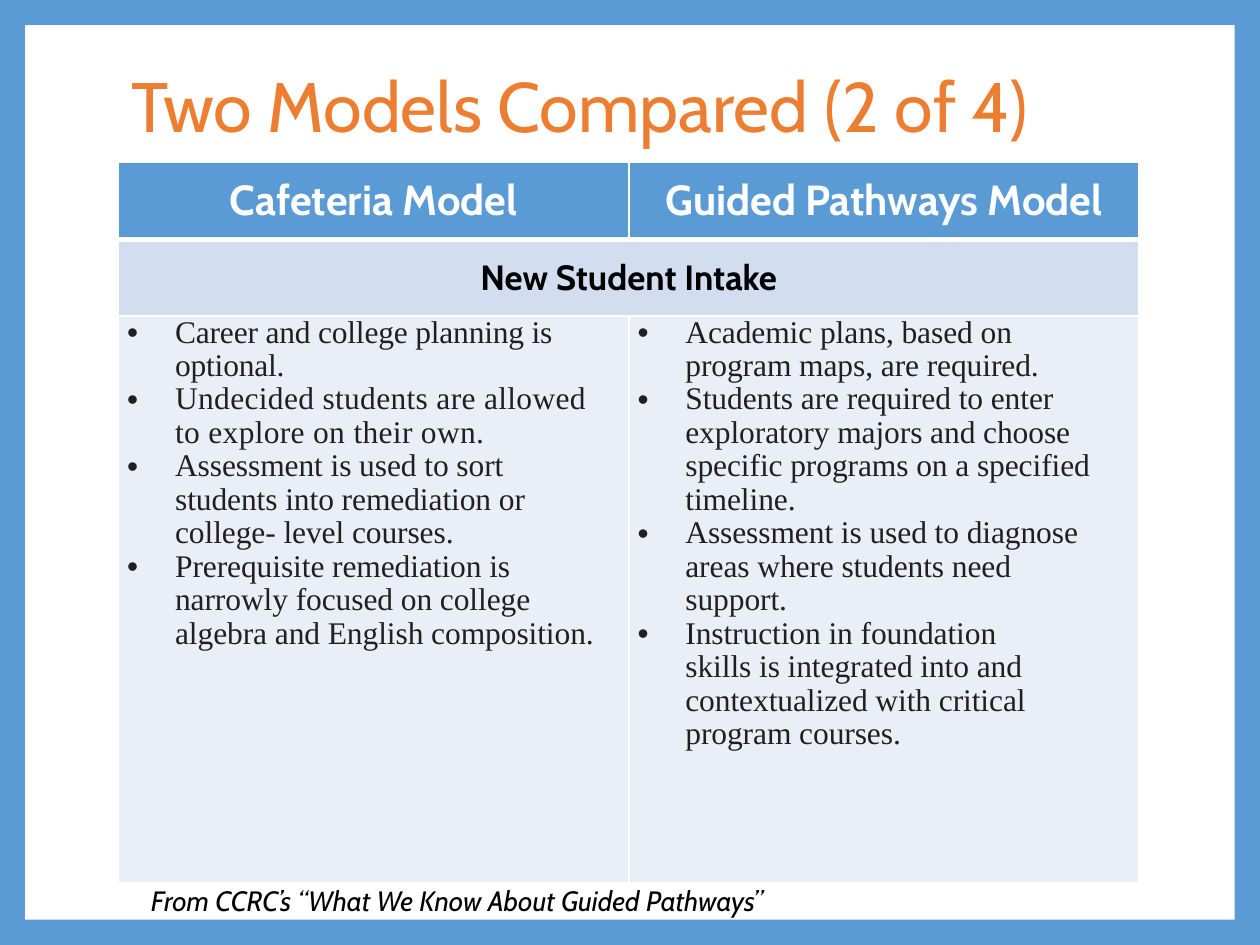
import pptx
import pptx.dml.color
import pptx.enum.shapes
import pptx.enum.text
import pptx.oxml
import pptx.oxml.ns
import pptx.util
from pptx.util import Inches

BLUE, ORANGE, WHITE, BLACK, INK = "5B9BD5", "ED7D31", "FFFFFF", "000000", "231F20"
BAND, PALE = "D2DEEF", "EAEFF7"
CENTER = pptx.enum.text.PP_ALIGN.CENTER
MIDDLE = pptx.enum.text.MSO_ANCHOR.MIDDLE

CAFETERIA = [
    ("Career and college planning is optional.", -10, 0),
    ("Undecided students are allowed to explore on their own.", 20, 0),
    ("Assessment is used to sort students into remediation or college- level courses.", -5, 0.2),
    ("Prerequisite remediation is narrowly focused on college algebra and English composition.", -5, 0.1),
]
PATHWAYS = [
    ("Academic plans, based on program maps, are required.", -5, 0.2),
    ("Students are required to enter exploratory majors and choose specific programs"
     " on a specified timeline.", -5, 0),
    ("Assessment is used to diagnose areas where students need support.", -5, 0.41),
    ("Instruction in foundation skills is integrated into and contextualized with"
     " critical program courses.", -5, 0.68),
]


def color(value):
    """Return the RGB colour for a hex string."""
    return pptx.dml.color.RGBColor.from_string(value)


def set_attributes(target, values):
    """Set every attribute named in a dict."""
    for name, value in values.items():
        setattr(target, name, value)


def paint(shape, value):
    """Give a shape, cell or background a solid fill."""
    shape.fill.solid()
    shape.fill.fore_color.rgb = color(value)


def write(paragraph, text, value, alignment=None, **font):
    """Add one formatted run to a paragraph and return it."""
    paragraph.alignment = alignment
    run = paragraph.add_run()
    run.text = text
    set_attributes(run.font, {"name": "Cabin", **font})
    run.font.color.rgb = color(value)
    return run


def add_border(cell, side, points):
    """Draw one white border of a cell."""
    properties = cell._tc.get_or_add_tcPr()
    border = pptx.oxml.parse_xml(
        f'<a:{side} {pptx.oxml.ns.nsdecls("a")} w="{pptx.util.Pt(points)}">'
        f'<a:solidFill><a:srgbClr val="{WHITE}"/></a:solidFill></a:{side}>')
    properties.append(border)


def format_cell(cell, fill, bottom=1):
    """Set the borders and fill of a cell."""
    for side, points in {"lnL": 1, "lnR": 1, "lnT": 1, "lnB": bottom}.items():
        add_border(cell, side, points)
    paint(cell, fill)


def add_heading(cell, text, value, size):
    """Write a centred bold heading in a cell."""
    cell.vertical_anchor = MIDDLE
    write(cell.text_frame.paragraphs[0], text, value, CENTER, size=pptx.util.Pt(size), bold=True)


def add_bullets(cell, items):
    """Fill a cell with bulleted paragraphs."""
    set_attributes(cell, {"margin_left": Inches(0.07), "margin_right": Inches(0.07),
                          "margin_top": 0, "margin_bottom": 0})
    for index, (text, spacing, right) in enumerate(items):
        frame = cell.text_frame
        paragraph = frame.add_paragraph() if index else frame.paragraphs[0]
        paragraph.line_spacing = 0.96
        properties = paragraph._p.get_or_add_pPr()
        for name, length in {"marL": 0.38, "marR": right, "indent": -0.38}.items():
            properties.set(name, str(Inches(length)))
        for body in (f'buClr {{}}><a:srgbClr val="{INK}"/></a:buClr',
                     'buFont {} typeface="Arial"/', 'buChar {} char="•"/'):
            properties.append(pptx.oxml.parse_xml(
                "<a:" + body.format(pptx.oxml.ns.nsdecls("a")) + ">"))
        run = write(paragraph, text, INK, name="Times New Roman",
                    size=pptx.util.Pt(18), bold=False)
        run._r.get_or_add_rPr().set("spc", str(spacing))


def add_frame(slide, left, top, width, height):
    """Place the white panel on the blue background."""
    paint(slide.background, BLUE)
    panel = slide.shapes.add_shape(
        pptx.enum.shapes.MSO_SHAPE.RECTANGLE, left, top, width, height)
    panel.shadow.inherit = False
    paint(panel, WHITE)
    panel.line.fill.background()
    slide.shapes._spTree.insert(2, panel._element)


def add_title(slide, left, top, width, height):
    """Place and format the title placeholder."""
    title = slide.shapes.title
    set_attributes(title, {"left": left, "top": top, "width": width, "height": height})
    title.text_frame.vertical_anchor = MIDDLE
    paragraph = title.text_frame.paragraphs[0]
    paragraph.line_spacing = 0.9
    write(paragraph, "Two Models Compared (2 of 4)", ORANGE,
          pptx.enum.text.PP_ALIGN.LEFT, size=pptx.util.Pt(40))


def add_comparison(slide, left, top, width, height):
    """Place the table that compares the two models."""
    table = slide.shapes.add_table(3, 2, left, top, width, height).table
    heading_height = Inches(0.61)
    for row, row_height in zip(table.rows, (heading_height, heading_height,
                                            height - 2 * heading_height)):
        row.height = row_height
    table.cell(1, 0).merge(table.cell(1, 1))
    models = {"Cafeteria Model": CAFETERIA, "Guided Pathways Model": PATHWAYS}
    for column, (name, items) in enumerate(models.items()):
        add_heading(table.cell(0, column), name, WHITE, 24)
        add_bullets(table.cell(2, column), items)
        for row, (fill, bottom) in enumerate(((BLUE, 3), (BAND, 1), (PALE, 1))):
            format_cell(table.cell(row, column), fill, bottom)
    add_heading(table.cell(1, 0), "New Student Intake", BLACK, 20)


def add_source(slide, left, top, width, height):
    """Place the source line under the table."""
    frame = slide.shapes.add_textbox(left, top, width, height).text_frame
    frame.word_wrap = True
    write(frame.paragraphs[0], "From CCRC’s “What We Know About Guided Pathways”",
          BLACK, size=pptx.util.Pt(16), italic=True)


def main():
    """Build and save the slide."""
    presentation = pptx.Presentation()
    set_attributes(presentation, {"slide_width": Inches(10), "slide_height": Inches(7.5)})
    slide = presentation.slides.add_slide(presentation.slide_layouts[5])
    add_frame(slide, Inches(0.2), Inches(0.2), Inches(9.6), Inches(7.1))
    add_title(slide, Inches(0.94), Inches(0.13), Inches(8.1), Inches(1.48))
    add_comparison(slide, Inches(0.94), Inches(1.29), Inches(8.1), Inches(5.72))
    add_source(slide, Inches(1.1), Inches(6.96), Inches(7.54), Inches(0.37))
    presentation.save("out.pptx")


if __name__ == "__main__":
    main()
